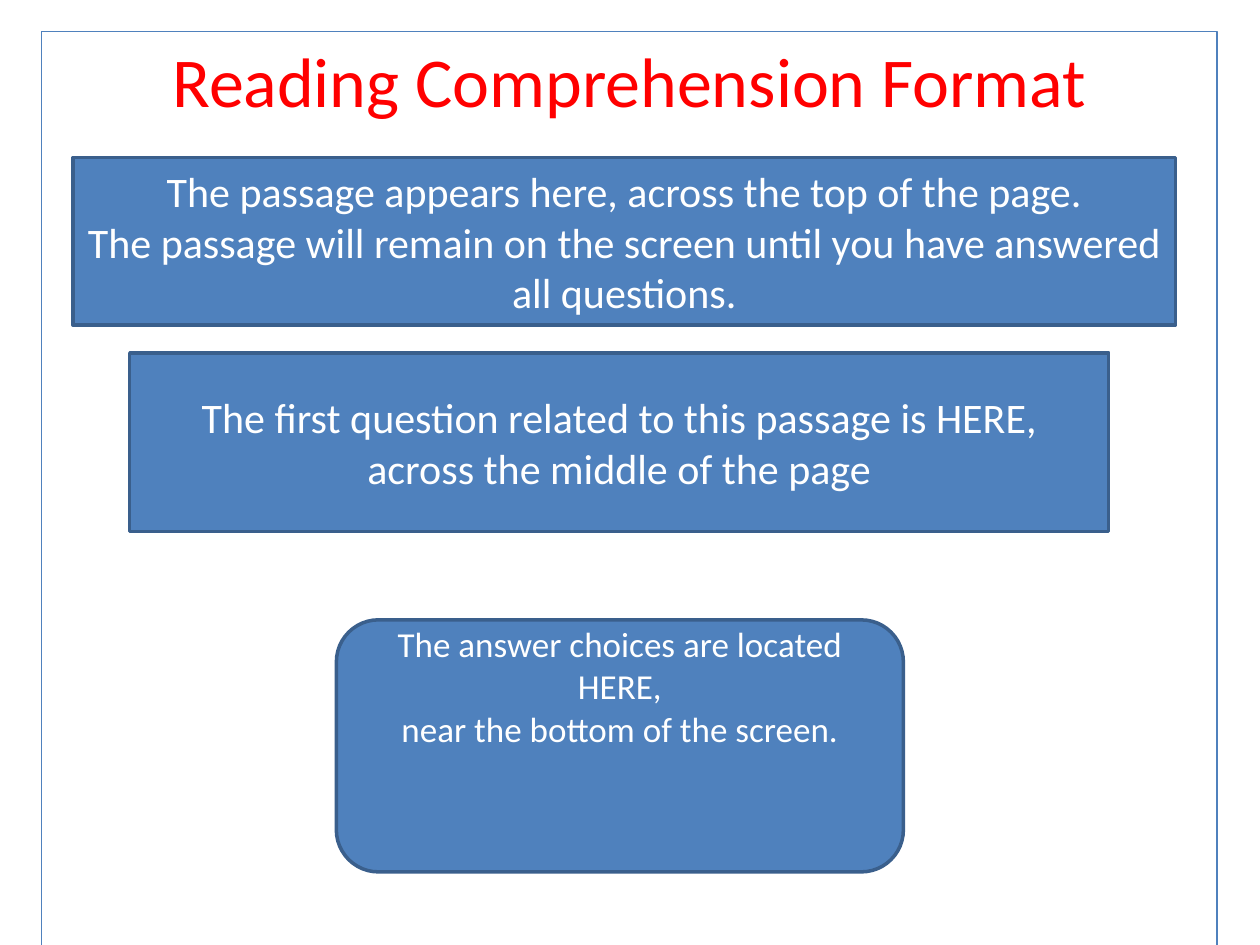
"""Build the slide that explains the reading comprehension screen layout."""
from pptx import Presentation
from pptx.dml.color import RGBColor
from pptx.enum.shapes import MSO_SHAPE
from pptx.enum.text import MSO_ANCHOR, PP_ALIGN
from pptx.util import Inches, Pt

RECTANGLE = MSO_SHAPE.RECTANGLE
ROUNDED = MSO_SHAPE.ROUNDED_RECTANGLE
TOP = MSO_ANCHOR.TOP
MIDDLE = MSO_ANCHOR.MIDDLE
CENTER = PP_ALIGN.CENTER

COLORS = {"blue": "4F81BD", "edge": "3A5F8C", "title": "FF0000", "white": "FFFFFF"}

FRAME = {"fill": None, "line": "blue", "width": 0.75, "text": "title", "size": 40, "anchor": TOP}
PANEL = {"fill": "blue", "line": "edge", "width": 2, "text": "white", "size": 24, "anchor": MIDDLE}
ANSWERS = {**PANEL, "size": 20, "margin_bottom": 1}

AREAS = [
    (RECTANGLE, (0.33, 0.25, 9.33, 7.44), FRAME, ["Reading Comprehension Format"]),
    (RECTANGLE, (0.58, 1.25, 8.75, 1.33), PANEL, [
        "The passage appears here, across the top of the page.",
        "The passage will remain on the screen until you have answered all questions.",
    ]),
    (RECTANGLE, (1.03, 2.8, 7.77, 1.42), PANEL, [
        "The first question related to this passage is HERE,",
        "across the middle of the page",
    ]),
    (ROUNDED, (2.67, 4.92, 4.5, 2), ANSWERS, [
        "The answer choices are located HERE,",
        "near the bottom of the screen.",
    ]),
]


def color(name):
    return RGBColor.from_string(COLORS[name])


presentation = Presentation()
presentation.slide_width = Inches(10)
presentation.slide_height = Inches(7.5)
slide = presentation.slides.add_slide(presentation.slide_layouts[6])

for outline, box, style, lines in AREAS:
    shape = slide.shapes.add_shape(outline, *map(Inches, box))
    shape.shadow.inherit = False
    if style["fill"]:
        shape.fill.solid()
        shape.fill.fore_color.rgb = color(style["fill"])
    else:
        shape.fill.background()
    shape.line.color.rgb = color(style["line"])
    shape.line.width = Pt(style["width"])

    text_frame = shape.text_frame
    frame_format = {
        "word_wrap": True,
        "vertical_anchor": style["anchor"],
        "margin_bottom": Inches(style.get("margin_bottom", 0.05)),
    }
    for attribute, value in frame_format.items():
        setattr(text_frame, attribute, value)

    text_frame.text = "\n".join(lines)
    font_format = {"name": "Calibri", "size": Pt(style["size"])}
    for paragraph in text_frame.paragraphs:
        paragraph.alignment = CENTER
        font = paragraph.runs[0].font
        font.color.rgb = color(style["text"])
        for attribute, value in font_format.items():
            setattr(font, attribute, value)

presentation.save("out.pptx")
